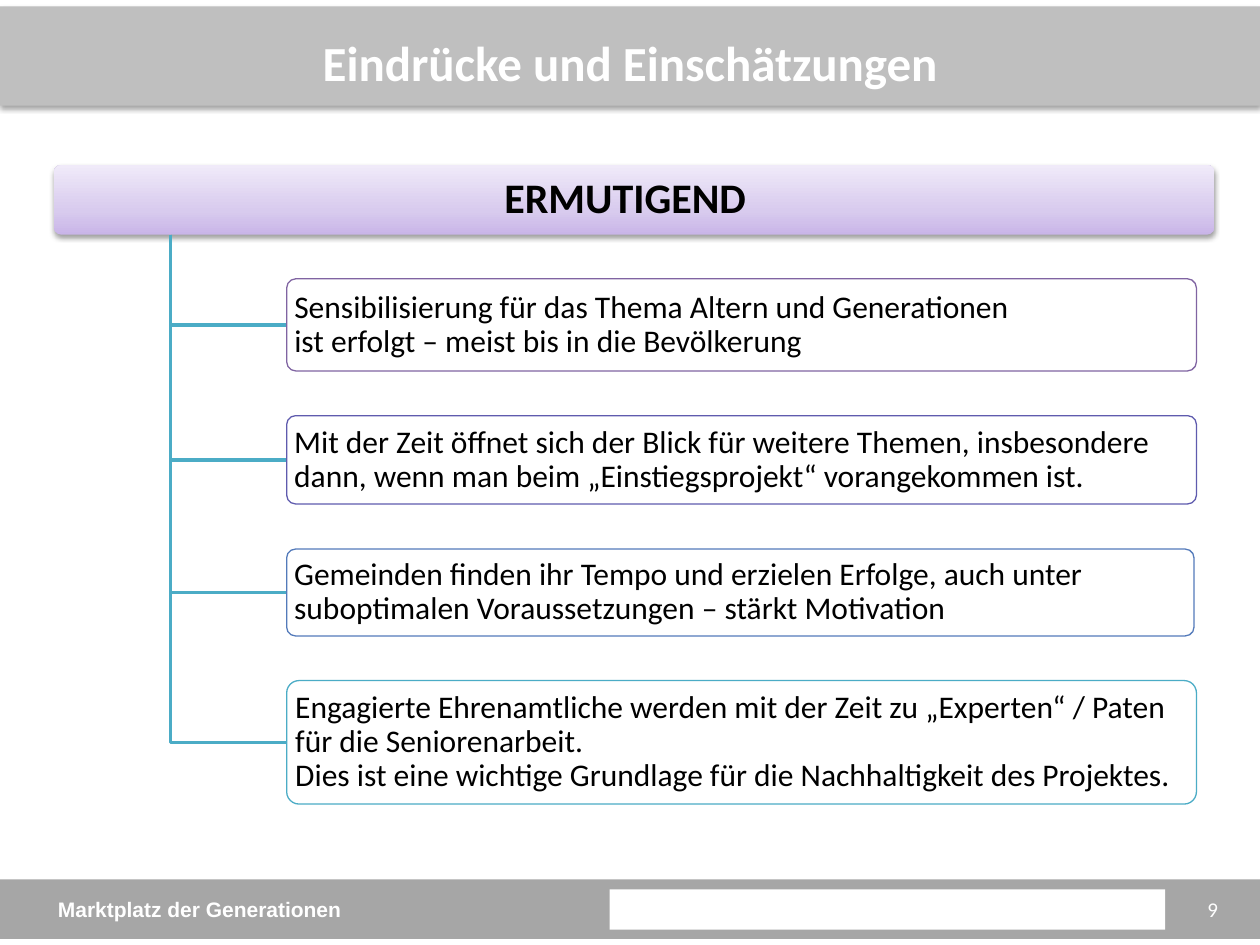
import copy

import pptx
import pptx.dml.color
import pptx.enum.shapes
import pptx.enum.text
import pptx.oxml
import pptx.oxml.ns
import pptx.util

Cm = pptx.util.Cm
Pt = pptx.util.Pt
RGBColor = pptx.dml.color.RGBColor
MSO_SHAPE = pptx.enum.shapes.MSO_SHAPE
PP_ALIGN = pptx.enum.text.PP_ALIGN
qn = pptx.oxml.ns.qn

WHITE = RGBColor(0xFF, 0xFF, 0xFF)
BLACK = RGBColor(0, 0, 0)
HEADER_GREY = RGBColor(0xBF, 0xBF, 0xBF)
FOOTER_GREY = RGBColor(0xA6, 0xA6, 0xA6)
LILAC = RGBColor(0xC9, 0xB5, 0xE8)
LILAC_MID = RGBColor(0xD8, 0xCB, 0xEE)
LILAC_LIGHT = RGBColor(0xF0, 0xEA, 0xF9)
TEAL = RGBColor(0x4B, 0xAC, 0xC6)
PURPLE = RGBColor(0x80, 0x64, 0xA2)
INDIGO = RGBColor(0x5F, 0x5B, 0xAE)
BLUE = RGBColor(0x53, 0x7A, 0xBA)

prs = pptx.Presentation()
prs.slide_width, prs.slide_height = Cm(25.4), Cm(19.05)
s = prs.slides.add_slide(prs.slide_layouts[6])


def add_box(kind, x, y, w, h, fill, shadow_alpha=0):
    """Add a filled shape without outline, with a soft shadow if asked for."""
    sp = s.shapes.add_shape(kind, Cm(x), Cm(y), Cm(w), Cm(h))
    sp.fill.solid()
    sp.fill.fore_color.rgb = fill
    sp.line.fill.background()
    sp.shadow.inherit = False
    if kind == MSO_SHAPE.ROUNDED_RECTANGLE:
        sp.adjustments[0] = 0.1
    if shadow_alpha:
        sp._element.spPr.find(qn("a:effectLst")).append(pptx.oxml.parse_xml(
            '<a:outerShdw xmlns:a="http://schemas.openxmlformats.org/drawingml/2006/main" '
            f'blurRad="{Pt(3.1)}" dist="{Pt(1.7)}" dir="5400000" rotWithShape="0">'
            f'<a:srgbClr val="000000"><a:alpha val="{shadow_alpha * 1000}"/></a:srgbClr>'
            '</a:outerShdw>'))
    return sp


def write(sp, lines, font, align=PP_ALIGN.LEFT, spacing=1.0, insets=(0.25, 0.13, 0.25, 0.13)):
    """Write one paragraph, with a line break between the given lines."""
    tf = sp.text_frame
    tf.word_wrap = True
    tf.vertical_anchor = pptx.enum.text.MSO_ANCHOR.MIDDLE
    for side, inset in zip(("left", "top", "right", "bottom"), insets):
        setattr(tf, f"margin_{side}", Cm(inset))
    p = tf.paragraphs[0]
    p.alignment = align
    p.line_spacing = spacing
    for i, line in enumerate(lines):
        if i:
            p.add_line_break()
        r = p.add_run()
        r.text = line
        for name, value in font.items():
            if name == "color":
                r.font.color.rgb = value
            else:
                setattr(r.font, name, value)


# Header bar and title
add_box(MSO_SHAPE.RECTANGLE, 0, 0.13, 25.4, 2, HEADER_GREY, shadow_alpha=35)
title = s.shapes.add_textbox(Cm(1.27), Cm(0.76), Cm(22.86), Cm(0.97))
write(title, ["Eindrücke und Einschätzungen"],
      {"name": "Calibri", "size": Pt(28), "bold": True, "color": WHITE}, PP_ALIGN.CENTER)

# Footer bar with white field
footer = add_box(MSO_SHAPE.RECTANGLE, 0, 17.73, 25.4, 1.2, FOOTER_GREY)
write(footer, ["Marktplatz der Generationen"],
      {"name": "Arial", "size": Pt(12), "bold": True, "color": WHITE},
      insets=(1.17, 0.33, 0.69, 0.33))
add_box(MSO_SHAPE.RECTANGLE, 12.29, 17.93, 11.2, 0.81, WHITE)

# Heading with a three-stop gradient
heading = add_box(MSO_SHAPE.ROUNDED_RECTANGLE, 1.09, 3.33, 23.39, 1.4, LILAC, shadow_alpha=38)
heading.fill.gradient()
heading.fill.gradient_angle = 90
first = heading._element.spPr.find(qn("a:gradFill")).find(qn("a:gsLst"))[0]
first.addnext(copy.deepcopy(first))
for stop, position, color in zip(heading.fill.gradient_stops, (0, 0.35, 1),
                                 (LILAC, LILAC_MID, LILAC_LIGHT)):
    stop.position = position
    stop.color.rgb = color
write(heading, ["ERMUTIGEND"],
      {"name": "Calibri", "size": Pt(24), "bold": True, "color": BLACK},
      PP_ALIGN.CENTER, 0.9, (0.13, 0.08, 0.49, 0.08))

# Statements, each tied to the heading by an elbow line
TRUNK_X, TRUNK_TOP, BOX_X = 3.44, 4.73, 5.78
statements = [
    (5.62, 18.34, 1.86, PURPLE,
     ["Sensibilisierung für das Thema Altern und Generationen",
      "ist erfolgt – meist bis in die Bevölkerung"]),
    (8.38, 18.34, 1.78, INDIGO,
     ["Mit der Zeit öffnet sich der Blick für weitere Themen, insbesondere "
      "dann, wenn man beim „Einstiegsprojekt“ vorangekommen ist."]),
    (11.07, 18.29, 1.75, BLUE,
     ["Gemeinden finden ihr Tempo und erzielen Erfolge, auch unter "
      "suboptimalen Voraussetzungen – stärkt Motivation"]),
    (13.72, 18.34, 2.49, TEAL,
     ["Engagierte Ehrenamtliche werden mit der Zeit zu „Experten“ / Paten "
      "für die Seniorenarbeit.",
      "Dies ist eine wichtige Grundlage für die Nachhaltigkeit des Projektes."]),
]
for y, w, h, color, lines in statements:
    middle = Cm(y + h / 2)
    builder = s.shapes.build_freeform(Cm(TRUNK_X), Cm(TRUNK_TOP))
    builder.add_line_segments([(Cm(TRUNK_X), middle), (Cm(BOX_X), middle)], close=False)
    elbow = builder.convert_to_shape()
    elbow.fill.background()
    elbow.line.color.rgb = TEAL
    elbow.line.width = Pt(2)
    elbow.shadow.inherit = False

    box = add_box(MSO_SHAPE.ROUNDED_RECTANGLE, BOX_X, y, w, h, WHITE)
    box.line.color.rgb = color
    box.line.width = Pt(0.75)
    write(box, lines, {"name": "Calibri", "size": Pt(18), "color": BLACK},
          spacing=0.9, insets=(0.1, 0.08, 0.1, 0.08))

# Slide number, in the free end of the footer bar
number = s.shapes.add_textbox(Cm(23.49), Cm(17.73), Cm(1.91), Cm(1.2))
write(number, ["9"], {"name": "Calibri", "size": Pt(12), "color": WHITE}, PP_ALIGN.CENTER)

prs.save("out.pptx")
